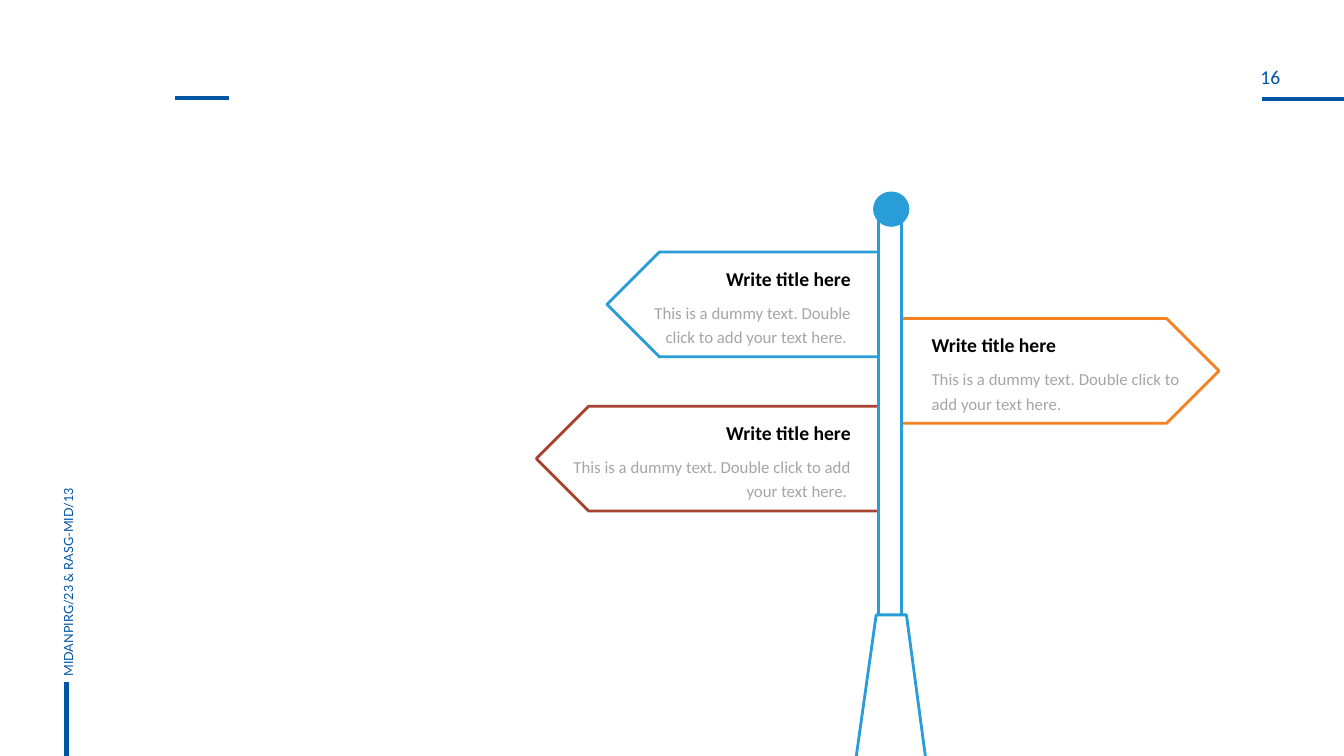
from lxml import etree
from pptx import Presentation
from pptx.dml.color import RGBColor
from pptx.enum import shapes, text
from pptx.oxml import ns
from pptx.util import Inches, Pt

HUES = {"navy": "0055A5", "sky": "289DD8", "brick": "A74233", "orange": "F58220",
        "white": "FFFFFF", "black": "000000", "gray": "808080"}
TITLE = "Write title here"
BODY = "This is a dummy text. Double click to add your text here."
SIGNS = [
    {"box": (6.02, 2.5, 2.73, 1.04), "hue": "sky", "left": True},
    {"box": (5.32, 4.03, 3.43, 1.04), "hue": "brick", "left": True},
    {"box": (8.93, 3.16, 3.16, 1.04), "hue": "orange", "left": False},
]
RULES = [(12.52, 0.98, 13.33, 0.98), (0.66, 6.77, 0.66, 7.5), (1.74, 0.97, 2.27, 0.97)]
LABELS = [
    {"words": "16", "box": (12, 0.64, 1.2, 0.33), "turn": 0,
     "font": {"name": "Calibri", "size": Pt(14)}, "side": text.PP_ALIGN.CENTER,
     "frame": {"word_wrap": False, "margin_left": 0, "margin_right": 0,
               "margin_top": 0, "margin_bottom": 0}},
    {"words": "MIDANPIRG/23 & RASG-MID/13", "box": (-1.16, 4.85, 3.67, 0.25), "turn": 270,
     "font": {"name": "Lato", "size": Pt(9)}, "side": text.PP_ALIGN.LEFT,
     "frame": {"word_wrap": True}},
]
POLE = (8.71, 2.14, 0.23, 4.06)
BASE = [(8.99, 6.1), (9.18, 7.52), (8.49, 7.52), (8.69, 6.1)]
KNOB = (8.66, 1.9, 0.36, 0.35)


def assign(item, values):
    for key, value in values.items():
        setattr(item, key, value)


def inches(nums):
    return [Inches(n) for n in nums]


def tint(hue):
    return RGBColor.from_string(HUES[hue])


def paint(shape, fill, line=None):
    shape.shadow.inherit = False
    shape.fill.solid()
    shape.fill.fore_color.rgb = tint(fill)
    if line:
        shape.line.color.rgb = tint(line)
        shape.line.width = Pt(2)
    else:
        shape.line.fill.background()


def write(para, words, hue, font):
    run = para.add_run()
    run.text = words
    assign(run.font, font)
    run.font.color.rgb = tint(hue)
    return run


def add_rule(slide, ends):
    rule = slide.shapes.add_connector(shapes.MSO_CONNECTOR.STRAIGHT, *inches(ends))
    rule.line.color.rgb = tint("navy")
    rule.line.width = Pt(3)
    etree.SubElement(rule._element.spPr, ns.qn("a:effectLst"))


def add_label(slide, label):
    box = slide.shapes.add_textbox(*inches(label["box"]))
    box.rotation = label["turn"]
    assign(box.text_frame, label["frame"])
    para = box.text_frame.paragraphs[0]
    para.alignment = label["side"]
    write(para, label["words"], "navy", label["font"])


def add_sign(slide, sign):
    left = sign["left"]
    shape = slide.shapes.add_shape(shapes.MSO_SHAPE.PENTAGON, *inches(sign["box"]))
    paint(shape, "white", sign["hue"])
    if left:
        shape._element.spPr.find(ns.qn("a:xfrm")).set("flipH", "1")
    frame = shape.text_frame
    assign(frame, {"word_wrap": True, "vertical_anchor": text.MSO_ANCHOR.MIDDLE,
                   "margin_left": Inches(0.08 if left else 0.31),
                   "margin_right": Inches(0.31 if left else 0.1),
                   "margin_top": Inches(0.05), "margin_bottom": Inches(0.05)})
    head, body = frame.paragraphs[0], frame.add_paragraph()
    for para in (head, body):
        assign(para, {"line_spacing": 1.2,
                      "alignment": text.PP_ALIGN.RIGHT if left else text.PP_ALIGN.LEFT})
    body.space_before = Pt(6)
    write(head, TITLE, "black", {"name": "Calibri", "size": Pt(14), "bold": True})
    run = write(body, BODY + " " if left else BODY, "gray",
                {"name": "Calibri", "size": Pt(12), "bold": False})
    color = run._r.find(".//" + ns.qn("a:srgbClr"))
    etree.SubElement(color, ns.qn("a:alpha")).set("val", "70000")


def add_post(slide):
    pole = slide.shapes.add_shape(shapes.MSO_SHAPE.RECTANGLE, *inches(POLE))
    paint(pole, "white", "sky")
    first, *rest = [inches(spot) for spot in BASE]
    path = slide.shapes.build_freeform(*first)
    path.add_line_segments(rest, close=True)
    paint(path.convert_to_shape(), "white", "sky")
    knob = slide.shapes.add_shape(shapes.MSO_SHAPE.OVAL, *inches(KNOB))
    paint(knob, "sky")


def main():
    deck = Presentation()
    assign(deck, {"slide_width": Inches(13.33), "slide_height": Inches(7.5)})
    slide = deck.slides.add_slide(deck.slide_layouts[6])
    for ends in RULES:
        add_rule(slide, ends)
    for label in LABELS:
        add_label(slide, label)
    for sign in SIGNS:
        add_sign(slide, sign)
    add_post(slide)
    deck.save("out.pptx")


if __name__ == "__main__":
    main()
